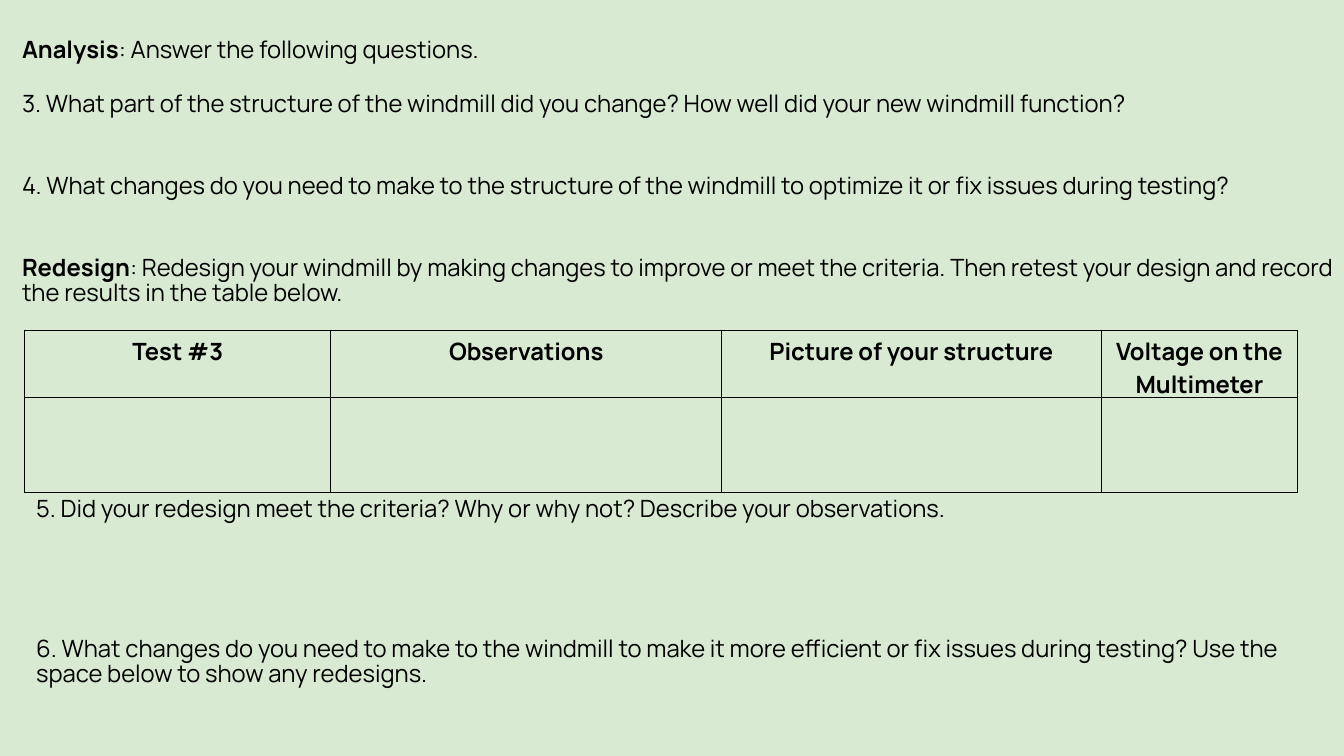
from lxml import etree
from pptx import Presentation
from pptx.dml.color import RGBColor
from pptx.enum.text import MSO_ANCHOR, PP_ALIGN
from pptx.oxml.ns import qn
from pptx.util import Cm, Pt

CENTER = PP_ALIGN.CENTER
TOP = MSO_ANCHOR.TOP
GREEN = RGBColor(0xD9, 0xEA, 0xD3)
BLACK = RGBColor(0x00, 0x00, 0x00)
LINE = 40.8  # points from one line to the next


class Worksheet:
    font = "Manrope"
    size = Pt(34)
    inset = Cm(0.25)
    spacing = 0.88

    def __init__(self, prs):
        self.s = prs.slides.add_slide(prs.slide_layouts[6])
        self.s.background.fill.solid()
        self.s.background.fill.fore_color.rgb = GREEN

    def style(self, font, bold=False):
        font.name = self.font
        font.size = self.size
        font.bold = bold
        font.color.rgb = BLACK

    def text(self, x, y, w, h, paragraphs):
        """Each paragraph is (lines left free above, bold lead, text)."""
        sp = self.s.shapes.add_textbox(Cm(x), Cm(y), Cm(w), Cm(h))
        tf = sp.text_frame
        tf.word_wrap = True
        tf.margin_left = tf.margin_right = self.inset
        tf.margin_top = tf.margin_bottom = self.inset
        for i, (gap, lead, body) in enumerate(paragraphs):
            p = tf.paragraphs[0] if i == 0 else tf.add_paragraph()
            p.line_spacing = self.spacing
            if gap:
                p.space_before = Pt(gap * LINE)
            for content, bold in ((lead, True), (body, False)):
                if content:
                    r = p.add_run()
                    r.text = content
                    self.style(r.font, bold)

    def border(self, cell):
        tc_pr = cell._tc.get_or_add_tcPr()
        for i, side in enumerate(("a:lnL", "a:lnR", "a:lnT", "a:lnB")):
            ln = etree.Element(qn(side), w=str(Pt(1.5)))
            fill = etree.SubElement(ln, qn("a:solidFill"))
            etree.SubElement(fill, qn("a:srgbClr"), val=str(BLACK))
            tc_pr.insert(i, ln)

    def table(self, x, y, widths, heights, headers):
        frame = self.s.shapes.add_table(
            len(heights), len(widths), Cm(x), Cm(y),
            Cm(sum(widths)), Cm(sum(heights)))
        table = frame.table
        for column, width in zip(table.columns, widths):
            column.width = Cm(width)
        for row, height in zip(table.rows, heights):
            row.height = Cm(height)
        for cell, header in zip(table.rows[0].cells, headers):
            cell.text = header
        for cell in table.iter_cells():
            cell.fill.background()
            cell.vertical_anchor = TOP
            cell.margin_left = cell.margin_right = self.inset
            cell.margin_top = cell.margin_bottom = self.inset
            p = cell.text_frame.paragraphs[0]
            p.alignment = CENTER
            self.style(p.font, True)
            for r in p.runs:
                self.style(r.font, True)
            self.border(cell)


def main():
    prs = Presentation()
    prs.slide_width, prs.slide_height = Cm(67.74), Cm(38.1)
    sheet = Worksheet(prs)

    # Analysis questions and redesign task
    sheet.text(0.86, 1.68, 66.88, 16.89, [
        (0, "Analysis", ": Answer the following questions."),
        (1, "", "3. What part of the structure of the windmill did you change? "
                "How well did your new windmill function?"),
        (2, "", "4. What changes do you need to make to the structure of the "
                "windmill to optimize it or fix issues during testing?"),
        (2, "Redesign", ": Redesign your windmill by making changes to improve "
                        "or meet the criteria. Then retest your design and "
                        "record the results in the table below."),
    ])

    # Questions after the retest
    sheet.text(1.57, 24.84, 64.95, 10.69, [
        (0, "", "5. Did your redesign meet the criteria? Why or why not? "
                "Describe your observations."),
        (4, "", "6. What changes do you need to make to the windmill to make it "
                "more efficient or fix issues during testing? Use the space "
                "below to show any redesigns."),
    ])

    # Results table
    sheet.table(1.24, 16.64, (15.44, 19.69, 19.13, 9.91), (3.38, 4.82),
                ("Test #3", "Observations", "Picture of your structure",
                 "Voltage on the Multimeter"))

    prs.save("out.pptx")


if __name__ == "__main__":
    main()
